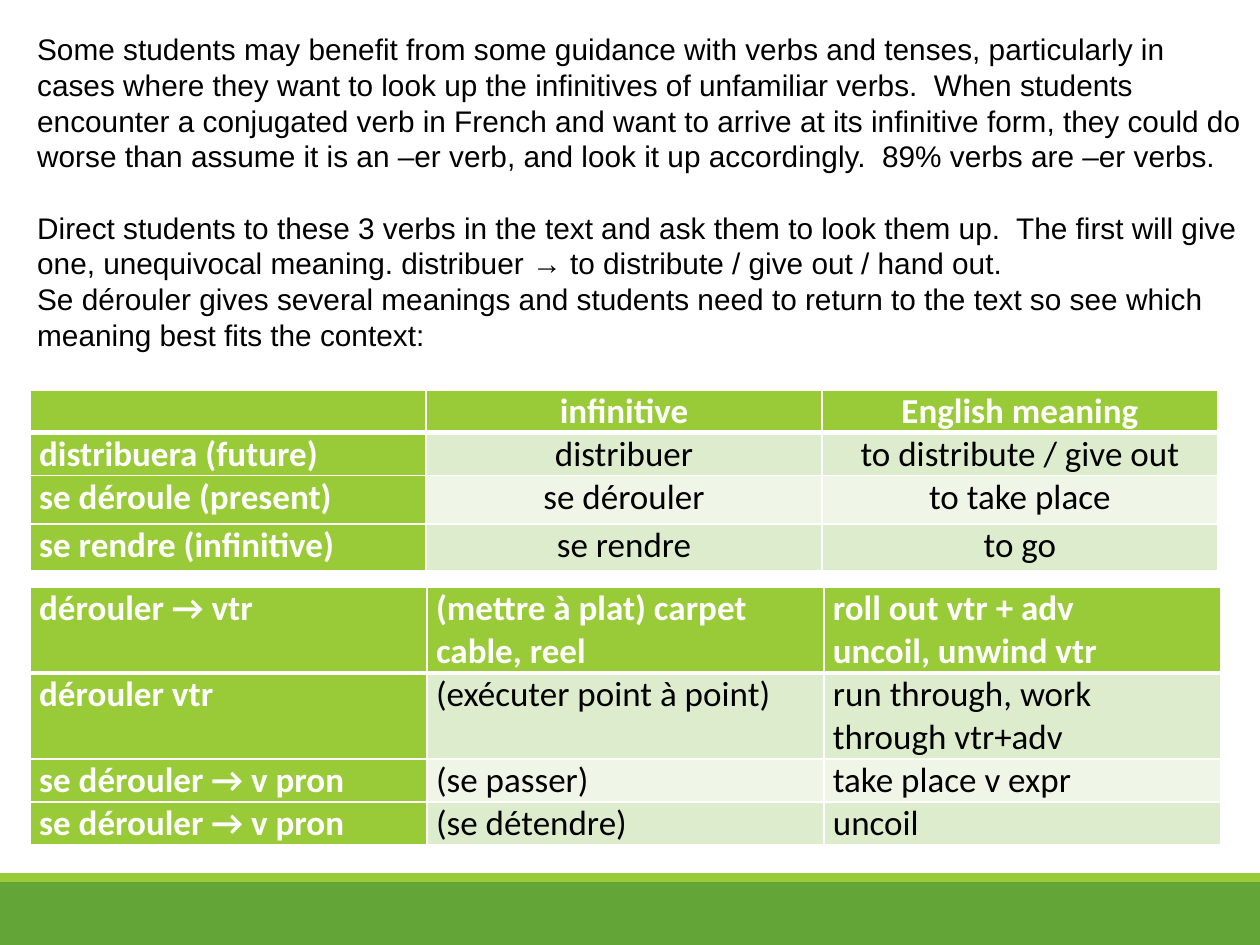
from lxml.etree import SubElement
from pptx import Presentation
from pptx.dml.color import RGBColor
from pptx.enum.shapes import MSO_SHAPE
from pptx.enum.text import MSO_ANCHOR, PP_ALIGN
from pptx.oxml.ns import qn
from pptx.util import Cm, Pt

GREEN = "99CB38"
DARK_GREEN = "63A537"
BAND_FILLS = ("DEECCE", "EFF6E8")
WHITE = "FFFFFF"
BLACK = "000000"
LINE_HEIGHT = 20.4

GUIDANCE = (
    "Some students may benefit from some guidance with verbs and tenses, "
    "particularly in cases where they want to look up the infinitives of "
    "unfamiliar verbs.  When students encounter a conjugated verb in French "
    "and want to arrive at its infinitive form, they could do worse than "
    "assume it is an –er verb, and look it up accordingly.  89% verbs are "
    "–er verbs.",
    "Direct students to these 3 verbs in the text and ask them to look them "
    "up.  The first will give one, unequivocal meaning. distribuer → to "
    "distribute / give out / hand out.",
    "Se dérouler gives several meanings and students need to return to the "
    "text so see which meaning best fits the context:",
)

VERB_FORMS = (
    ("", "infinitive", "English meaning"),
    ("distribuera (future)", "distribuer", "to distribute / give out"),
    ("se déroule (present)", "se dérouler", "to take place"),
    ("se rendre (infinitive)", "se rendre", "to go"),
)

DICTIONARY_ENTRIES = (
    ("dérouler → vtr", "(mettre à plat) carpet\ncable, reel",
     "roll out vtr + adv\nuncoil, unwind vtr"),
    ("dérouler vtr", "(exécuter point à point)",
     "run through, work through vtr+adv"),
    ("se dérouler → v pron", "(se passer)", "take place v expr"),
    ("se dérouler → v pron", "(se détendre)", "uncoil"),
)


def color(hex_string):
    return RGBColor.from_string(hex_string)


def write_text(paragraph, text, *, font, size, fill=BLACK, bold=False,
               align=PP_ALIGN.LEFT, line_height=None, before=0):
    paragraph.text = text
    paragraph.alignment = align
    paragraph.space_before = Pt(before)
    if line_height:
        paragraph.line_spacing = Pt(line_height)
    for run in paragraph.runs:
        run.font.name = font
        run.font.size = Pt(size)
        run.font.bold = bold
        run.font.color.rgb = color(fill)


def add_bar(slide, top, width, height, fill):
    bar = slide.shapes.add_shape(MSO_SHAPE.RECTANGLE, 0, top, width, height)
    bar.shadow.inherit = False
    bar.fill.solid()
    bar.fill.fore_color.rgb = color(fill)
    bar.line.fill.background()


def add_guidance(slide, paragraphs):
    box = slide.shapes.add_textbox(Cm(0.5), Cm(0.5), Cm(24.9), Cm(9.7))
    frame = box.text_frame
    frame.word_wrap = True
    frame.vertical_anchor = MSO_ANCHOR.TOP
    for index, text in enumerate(paragraphs):
        paragraph = frame.add_paragraph() if index else frame.paragraphs[0]
        # One open line separates the introduction from the task
        write_text(paragraph, text, font="Arial", size=17,
                   line_height=LINE_HEIGHT,
                   before=LINE_HEIGHT if index == 1 else 0)


def set_borders(cell, top, bottom):
    properties = cell._tc.get_or_add_tcPr()
    for side, points in (("L", 1), ("R", 1), ("T", top), ("B", bottom)):
        line = SubElement(properties, qn(f"a:ln{side}"), w=str(Pt(points)))
        solid = SubElement(line, qn("a:solidFill"))
        SubElement(solid, qn("a:srgbClr"), val=WHITE)


def add_verb_table(slide, rows, top, column_width, row_heights, body_align):
    columns = len(rows[0])
    frame = slide.shapes.add_table(
        len(rows), columns, Cm(0.61), Cm(top),
        Cm(column_width * columns), Cm(sum(row_heights)))
    table = frame.table
    for column in table.columns:
        column.width = Cm(column_width)
    for row_index, texts in enumerate(rows):
        table.rows[row_index].height = Cm(row_heights[row_index])
        for column_index, text in enumerate(texts):
            cell = table.cell(row_index, column_index)
            heading = row_index == 0 or column_index == 0
            cell.margin_left = cell.margin_right = Cm(0.18)
            cell.margin_top = cell.margin_bottom = 0
            # The rule under the header row is thicker
            set_borders(cell, top=3 if row_index == 1 else 1,
                        bottom=3 if row_index == 0 else 1)
            cell.fill.solid()
            cell.fill.fore_color.rgb = color(
                GREEN if heading else BAND_FILLS[(row_index - 1) % 2])
            write_text(cell.text_frame.paragraphs[0], text,
                       font="Calibri", size=20, bold=heading,
                       fill=WHITE if heading else BLACK,
                       align=body_align if column_index else PP_ALIGN.LEFT)


def main():
    presentation = Presentation()
    presentation.slide_width = Cm(25.4)
    presentation.slide_height = Cm(19.05)
    slide = presentation.slides.add_slide(presentation.slide_layouts[6])

    # Footer bars
    width = presentation.slide_width
    add_bar(slide, Cm(17.78), width, Cm(1.27), DARK_GREEN)
    add_bar(slide, Cm(17.6), width, Cm(0.18), GREEN)

    # Verb tables
    add_verb_table(slide, VERB_FORMS, 7.86, 7.98,
                   (0.86, 0.86, 0.97, 0.94), PP_ALIGN.CENTER)
    add_verb_table(slide, DICTIONARY_ENTRIES, 11.84, 8.0,
                   (1.72, 1.72, 0.86, 0.86), PP_ALIGN.LEFT)

    # Teacher guidance
    add_guidance(slide, GUIDANCE)

    presentation.save("out.pptx")


if __name__ == "__main__":
    main()
